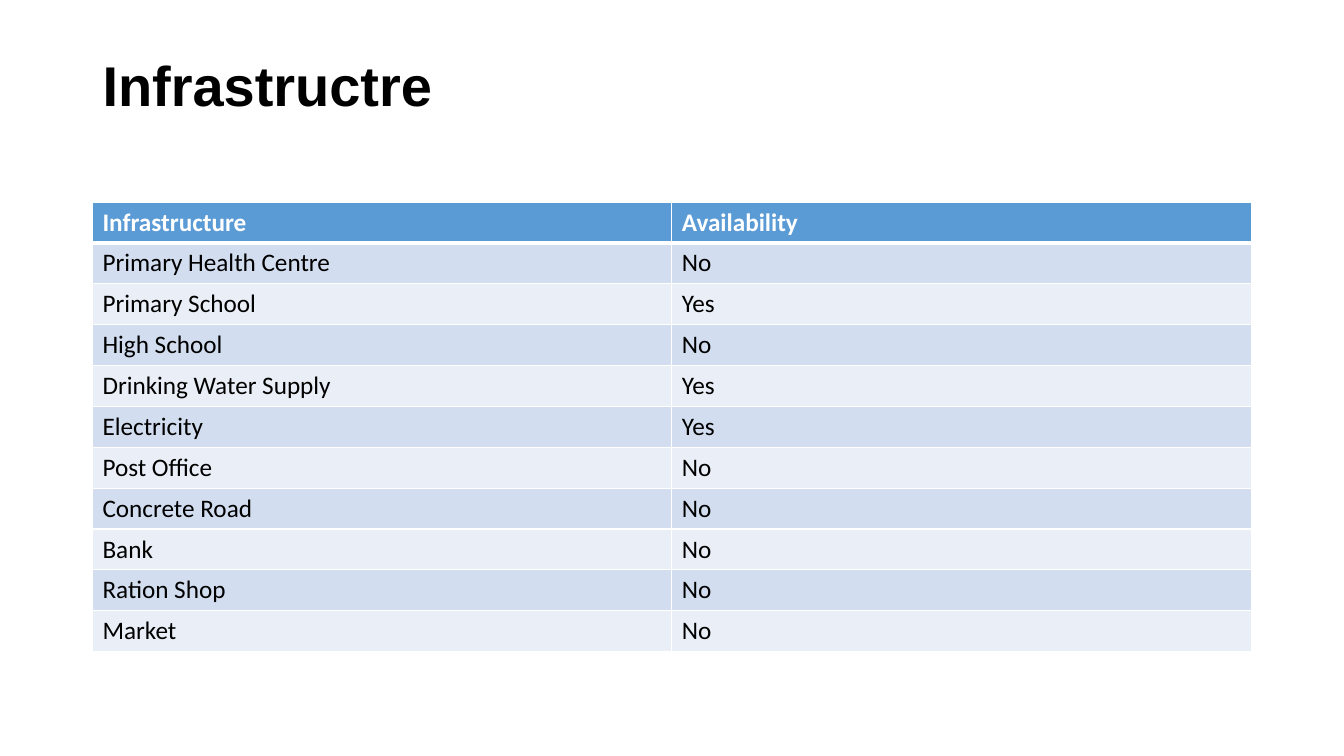
"""Build the slide on village infrastructure and its availability."""
from lxml import etree
from pptx import Presentation
from pptx import util as u
from pptx.dml.color import RGBColor
from pptx.enum import text
from pptx.oxml.ns import qn


def paint(fill, hue):
    fill.solid()
    fill.fore_color.rgb = RGBColor.from_string(hue)


def style(run, hue, look):
    for key, value in look.items():
        setattr(run.font, key, value)
    paint(run.font.fill, hue)


rows = [
    ("Infrastructure", "Availability"),
    ("Primary Health Centre", "No"),
    ("Primary School", "Yes"),
    ("High School", "No"),
    ("Drinking Water Supply", "Yes"),
    ("Electricity", "Yes"),
    ("Post Office", "No"),
    ("Concrete Road", "No"),
    ("Bank", "No"),
    ("Ration Shop", "No"),
    ("Market", "No"),
]
bands = ["EAEFF7", "D2DEEF"]

deck = Presentation()
deck.slide_width, deck.slide_height = u.Cm(33.87), u.Cm(19.05)
slide = deck.slides.add_slide(deck.slide_layouts[5])
paint(slide.background.fill, "FFFFFF")

title = slide.shapes.title
place = {"left": 2.33, "top": 1.15, "width": 22.4, "height": 1.96}
for key, value in place.items():
    setattr(title, key, u.Cm(value))
frame = title.text_frame
frame.text = "Infrastructre"
frame.vertical_anchor = text.MSO_ANCHOR.MIDDLE
frame.paragraphs[0].alignment = text.PP_ALIGN.LEFT
style(frame.paragraphs[0].runs[0], "000000",
      {"name": "Arial", "size": u.Pt(40), "bold": True})

high = 1.03
table = slide.shapes.add_table(
    len(rows), 2, u.Cm(2.33), u.Cm(5.09), u.Cm(29.2), u.Cm(high * len(rows))
).table
for row, words in enumerate(rows):
    table.rows[row].height = u.Cm(high)
    head = row == 0
    for col, word in enumerate(words):
        cell = table.cell(row, col)
        cell.text = word
        style(cell.text_frame.paragraphs[0].runs[0],
              "FFFFFF" if head else "000000",
              {"name": "Calibri", "size": u.Pt(18), "bold": head})
        props = cell._tc.get_or_add_tcPr()
        for side in "LRTB":
            thick = (row, side) in [(0, "B"), (1, "T")]
            line = etree.SubElement(props, qn("a:ln" + side),
                                    w=str(u.Pt(3 if thick else 1)))
            solid = etree.SubElement(line, qn("a:solidFill"))
            etree.SubElement(solid, qn("a:srgbClr"), val="FFFFFF")
        paint(cell.fill, "5B9BD5" if head else bands[row % 2])

deck.save("out.pptx")
